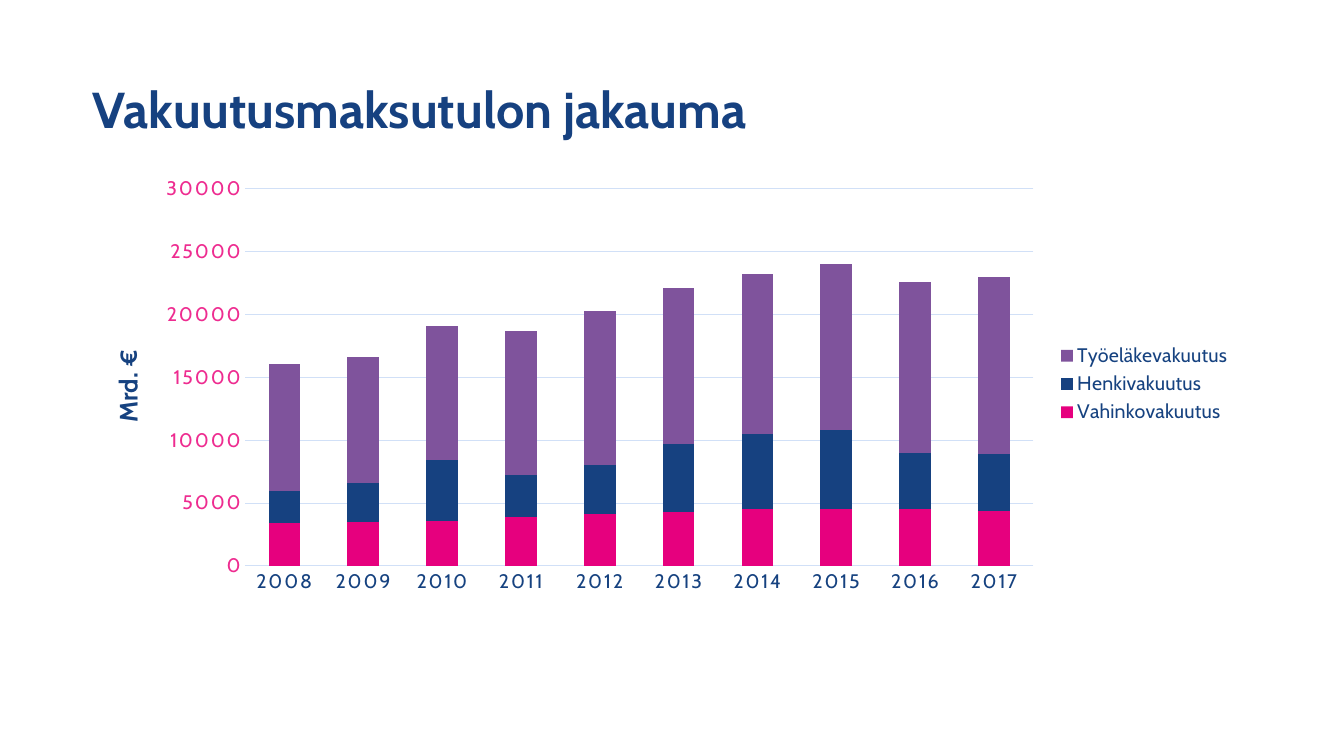
from dataclasses import dataclass

from lxml import etree
from pptx import Presentation
from pptx.chart.data import CategoryChartData
from pptx.dml.color import RGBColor as RGB
from pptx.enum.chart import XL_CHART_TYPE as ChartType
from pptx.enum.chart import XL_LEGEND_POSITION as LegendPos
from pptx.enum.chart import XL_TICK_MARK as Tick
from pptx.enum.text import MSO_ANCHOR as Anchor
from pptx.enum.text import PP_ALIGN as Align
from pptx.oxml.ns import qn
from pptx.util import Inches, Pt

# Content
TITLE = "Vakuutusmaksutulon jakauma"
AXIS_TITLE = "Mrd. €"
YEARS = [str(year) for year in range(2008, 2018)]
SERIES = {
    "Vahinkovakuutus": [3400, 3500, 3600, 3900, 4100, 4300, 4500, 4500, 4500, 4400],
    "Henkivakuutus": [2600, 3100, 4800, 3300, 3900, 5400, 6000, 6300, 4500, 4500],
    "Työeläkevakuutus": [10100, 10000, 10700, 11500, 12300, 12400, 12700, 13200, 13600, 14100],
}


@dataclass(frozen=True)
class Theme:
    font: str = "Cabin"
    navy: RGB = RGB(0x16, 0x41, 0x80)
    text: RGB = RGB(0x16, 0x42, 0x80)
    pink: RGB = RGB(0xEE, 0x2C, 0x90)
    grid: RGB = RGB(0xD1, 0xE0, 0xF7)
    bars: tuple = (RGB(0xE6, 0x00, 0x7E), navy, RGB(0x7F, 0x53, 0x9C))
    title_size: int = 36
    axis_title_size: int = 18
    label_size: int = 14
    tracking: str = "120"


T = Theme()


def set_font(font, size, color, bold=False):
    font.name, font.size, font.bold = T.font, Pt(size), bold
    font.color.rgb = color


def set_line(line):
    line.color.rgb = T.grid
    line.width = Pt(0.75)


def set_layout(parent, **fractions):
    """Fix a chart part's place, in fractions of the chart's size."""
    layout = parent.find(qn("c:layout"))
    if layout is None:
        layout = etree.Element(qn("c:layout"))
        text = parent.find(qn("c:tx"))
        parent.insert(0 if text is None else 1, layout)
    manual = etree.SubElement(layout, qn("c:manualLayout"))
    if "w" in fractions:
        etree.SubElement(manual, qn("c:layoutTarget")).set("val", "inner")
    for mode in ("xMode", "yMode"):
        etree.SubElement(manual, qn(f"c:{mode}")).set("val", "edge")
    for key, value in fractions.items():
        etree.SubElement(manual, qn(f"c:{key}")).set("val", str(value))


def style_axis(axis, color):
    axis.major_tick_mark = axis.minor_tick_mark = Tick.NONE
    set_font(axis.tick_labels.font, T.label_size, color)
    for props in axis._element.find(qn("c:txPr")).iter(qn("a:defRPr")):
        props.set("spc", T.tracking)


prs = Presentation()
prs.slide_width, prs.slide_height = Inches(13.33), Inches(7.5)
s = prs.slides.add_slide(prs.slide_layouts[5])

# Title
title = s.shapes.title
title.left, title.top = Inches(0.82), Inches(0.39)
title.width, title.height = Inches(11.5), Inches(1.45)
tf = title.text_frame
tf.text = TITLE
tf.word_wrap = True
tf.vertical_anchor = Anchor.MIDDLE
p = tf.paragraphs[0]
p.alignment = Align.LEFT
p.line_spacing = 0.9
set_font(p.font, T.title_size, T.navy, True)

# Stacked columns
data = CategoryChartData(number_format="General")
data.categories = YEARS
for name, values in SERIES.items():
    data.add_series(name, values)
chart = s.shapes.add_chart(ChartType.COLUMN_STACKED, Inches(0.82), Inches(1.66),
                           Inches(11.5), Inches(4.3), data).chart
chart.has_title = False
set_font(chart.font, T.label_size, T.text)
plot = chart.plots[0]
plot.gap_width, plot.overlap = 150, 100
plot.vary_by_categories = False
for series, color in zip(plot.series, T.bars):
    series.format.fill.solid()
    series.format.fill.fore_color.rgb = color
set_layout(chart._chartSpace.chart.plotArea, x=0.14, y=0.05, w=0.68, h=0.87)

# Axes
years, amounts = chart.category_axis, chart.value_axis
style_axis(years, T.text)
set_line(years.format.line)
style_axis(amounts, T.pink)
amounts.format.line.fill.background()
amounts.minimum_scale, amounts.maximum_scale, amounts.major_unit = 0, 30000, 5000
set_line(amounts.major_gridlines.format.line)
axis_title = amounts.axis_title
tf = axis_title.text_frame
tf.text = AXIS_TITLE
tf._txBody.find(qn("a:bodyPr")).set("rot", "-5400000")
set_font(tf.paragraphs[0].font, T.axis_title_size, T.text, True)
set_layout(axis_title._element, x=0.02, y=0.41)

# Legend
chart.has_legend = True
chart.legend.position = LegendPos.RIGHT
chart.legend.include_in_layout = False
set_font(chart.legend.font, T.label_size, T.text)

prs.save("out.pptx")
